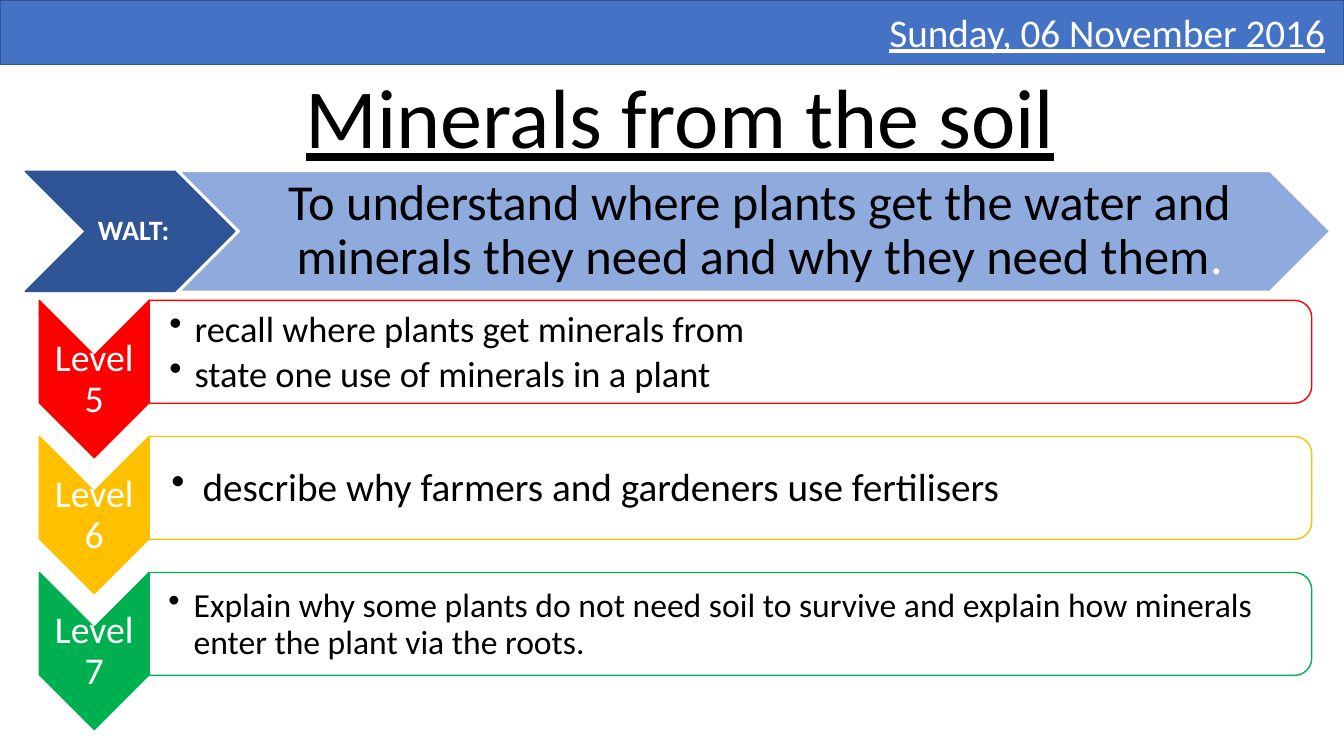
from pptx import Presentation
from pptx.dml.color import RGBColor
from pptx.enum.shapes import MSO_SHAPE
from pptx.enum.text import MSO_ANCHOR, PP_ALIGN
from pptx.oxml.ns import qn
from pptx.util import Inches, Pt
from lxml import etree

RECT = MSO_SHAPE.RECTANGLE
CHEVRON = MSO_SHAPE.CHEVRON
ROUNDED_SIDE = MSO_SHAPE.ROUND_2_SAME_RECTANGLE
TOP, MIDDLE = MSO_ANCHOR.TOP, MSO_ANCHOR.MIDDLE
LEFT, CENTER, RIGHT = PP_ALIGN.LEFT, PP_ALIGN.CENTER, PP_ALIGN.RIGHT

WHITE, BLACK = "FFFFFF", "000000"
BLUE, NAVY, PALE_BLUE = "4472C4", "2F5597", "8FAADC"


def rgb(value):
    return RGBColor.from_string(value)


class SlideBuilder:
    font = "Calibri"

    def __init__(self, slide):
        self.slide = slide

    def shape(self, kind, x, y, w, h, fill, line, alpha=None):
        sp = self.slide.shapes.add_shape(
            kind, Inches(x), Inches(y), Inches(w), Inches(h))
        sp.shadow.inherit = False
        sp.fill.solid()
        sp.fill.fore_color.rgb = rgb(fill)
        sp.line.color.rgb = rgb(line)
        sp.line.width = Pt(1)
        if alpha:
            color = sp._element.spPr.find(qn("a:solidFill"))[0]
            etree.SubElement(color, qn("a:alpha"), val=str(alpha * 1000))
        return sp

    def turned(self, kind, x, y, w, h, fill, line, alpha=None):
        """Shape turned by 90 degrees that covers the given area."""
        sp = self.shape(kind, x + (w - h) / 2, y + (h - w) / 2, h, w,
                        fill, line, alpha)
        sp.rotation = 90
        return sp

    def text(self, x, y, w, h, lines, size, color=BLACK, align=CENTER,
             anchor=MIDDLE, insets=(0.02, 0.02), spacing=0.9, wrap=True,
             bold=False, underline=False, indent=0):
        box = self.slide.shapes.add_textbox(
            Inches(x), Inches(y), Inches(w), Inches(h))
        tf = box.text_frame
        tf.word_wrap = wrap
        tf.vertical_anchor = anchor
        left, other = insets
        tf.margin_left = Inches(left)
        tf.margin_right = tf.margin_top = tf.margin_bottom = Inches(other)
        tf.text = "\n".join(lines)
        for p in tf.paragraphs:
            p.alignment = align
            p.line_spacing = spacing
            if indent:
                self.bullet(p, indent)
                p.space_after = Pt(size * 0.15)
            for r in p.runs:
                self.style(r, size, color, bold, underline)
        return tf

    def style(self, r, size, color, bold=False, underline=False):
        r.font.name = self.font
        r.font.size = Pt(size)
        r.font.bold = bold
        r.font.underline = underline
        r.font.color.rgb = rgb(color)

    def bullet(self, p, indent):
        pPr = p._p.get_or_add_pPr()
        pPr.set("marL", str(Inches(indent)))
        pPr.set("indent", str(-Inches(indent)))
        etree.SubElement(pPr, qn("a:buChar"), char="•")

    def level(self, y, name, color, lines, size, inset, indent):
        self.turned(CHEVRON, 0.39, y, 1.09, 1.56, color, color)
        self.text(0.39, y + 0.55, 1.09, 0.47, [name], 27, WHITE, wrap=False)
        self.turned(ROUNDED_SIDE, 1.48, y, 11.53, 1.02, WHITE, color, alpha=90)
        self.text(1.48, y + 0.06, 11.48, 0.92, lines, size, align=LEFT,
                  insets=(inset, 0.02), indent=indent)


def main():
    prs = Presentation()
    prs.slide_width, prs.slide_height = Inches(13.33), Inches(7.5)
    s = SlideBuilder(prs.slides.add_slide(prs.slide_layouts[6]))

    # Levels: name, colour, goals, text size, left inset, bullet indent
    levels = [
        ("Level 5", "FF0000", ["recall where plants get minerals from",
                               "state one use of minerals in a plant"],
         26, 0.2, 0.25),
        ("Level 6", "FFC000",
         ["describe why farmers and gardeners use fertilisers"],
         28, 0.22, 0.31),
        ("Level 7", "00B050",
         ["Explain why some plants do not need soil to survive and explain "
          "how minerals enter the plant via the roots."],
         24, 0.19, 0.25),
    ]
    for i, level in enumerate(levels):
        s.level(2.98 + 1.35 * i, *level)

    # Title and date bar
    s.text(1.2, 0.59, 11.04, 1.11, ["Minerals from the soil"], 60, anchor=TOP,
           insets=(0.1, 0.05), spacing=1.0, underline=True)
    s.shape(RECT, 0, 0, 13.33, 0.64, BLUE, "325491")
    s.text(7.74, 0.03, 5.45, 0.57, ["Sunday, 06 November 2016"], 28, WHITE,
           align=RIGHT, anchor=TOP, insets=(0.1, 0.05), spacing=1.0,
           underline=True)

    # Learning aim
    s.shape(CHEVRON, 0.25, 1.7, 2.08, 1.19, NAVY, NAVY)
    s.text(0.85, 1.7, 0.89, 1.19, ["WALT:"], 20, WHITE, insets=(0.09, 0.03),
           bold=True)
    s.shape(CHEVRON, 1.78, 1.7, 11.41, 1.19, PALE_BLUE, WHITE)
    tf = s.text(2.37, 1.7, 10.22, 1.19,
                ["To understand where plants get the water and minerals "
                 "they need and why they need them"],
                36, insets=(0.16, 0.05))
    r = tf.paragraphs[0].add_run()
    r.text = "."
    s.style(r, 36, WHITE)

    prs.save("out.pptx")


if __name__ == "__main__":
    main()
